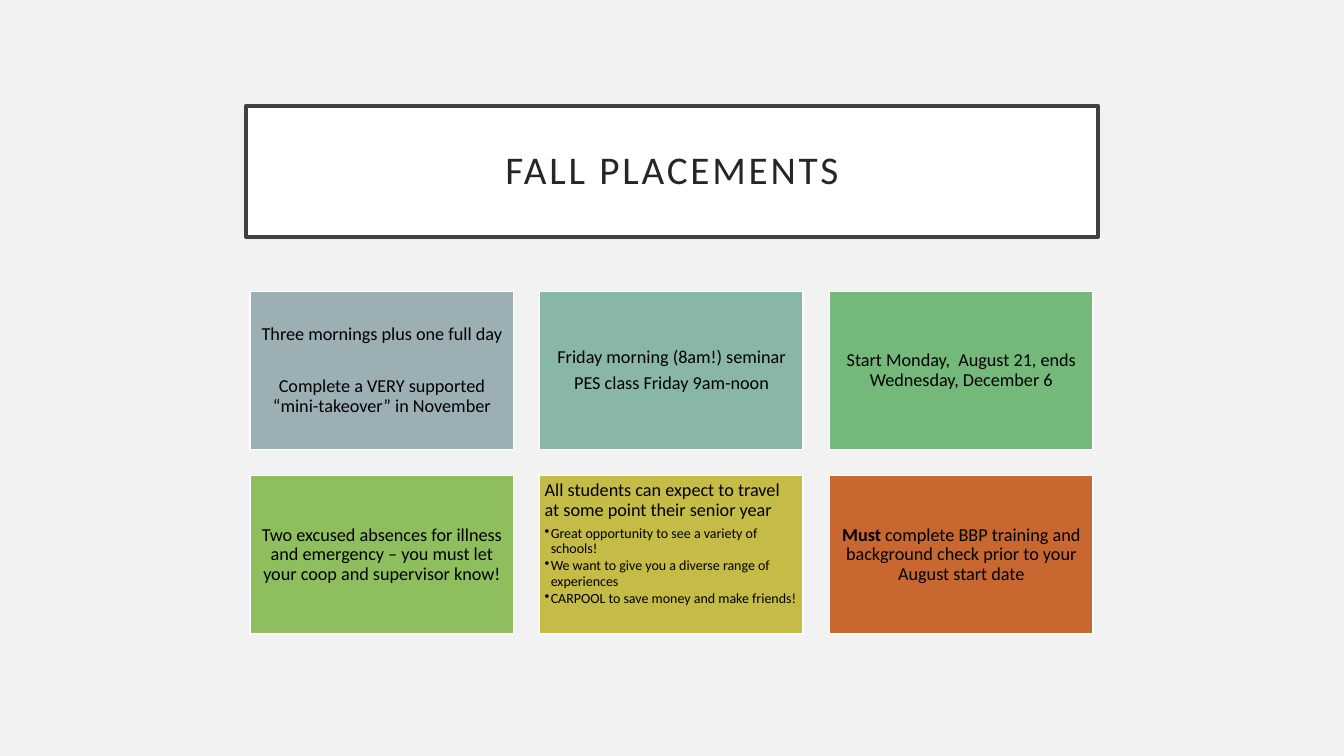
import pptx
import pptx.util
import pptx.dml.color
import pptx.enum.shapes
import pptx.enum.text
import pptx.oxml
import pptx.oxml.ns
import lxml.etree

Inches = pptx.util.Inches
Pt = pptx.util.Pt
Align = pptx.enum.text.PP_ALIGN
Anchor = pptx.enum.text.MSO_ANCHOR

FONT = "Calibri"
COLORS = {
    "background": "F2F2F2",
    "white": "FFFFFF",
    "title_border": "404040",
    "title_text": "262626",
    "card_text": "000000",
    "schedule": "9BAFB5",
    "friday": "88B6A7",
    "dates": "74B97A",
    "absences": "8EBE5E",
    "travel": "C4BC47",
    "training": "C96731",
}
BLANK_LINE_GAP = 23.4
CARDS = [
    ("schedule", [
        ([("Three mornings plus one full day", False)], BLANK_LINE_GAP),
        ([("Complete a VERY supported “mini-takeover” in November", False)], 4.55),
    ], []),
    ("friday", [
        ([("Friday morning (8am!) seminar", False)], 4.55),
        ([("PES class Friday 9am-noon", False)], 4.55),
    ], []),
    ("dates", [
        ([("Start Monday,  August 21, ends Wednesday, December 6", False)], 4.55),
    ], []),
    ("absences", [
        ([("Two excused absences for illness and emergency – you must let "
           "your coop and supervisor know!", False)], 4.55),
    ], []),
    ("travel", [
        ([("All students can expect to travel at some point their senior year", False)], 4.55),
    ], [
        "Great opportunity to see a variety of schools!",
        "We want to give you a diverse range of experiences",
        "CARPOOL to save money and make friends!",
    ]),
    ("training", [
        ([("Must", True),
          (" complete BBP training and background check prior to your August start date", False)],
         4.55),
    ], []),
]


def rgb(name):
    return pptx.dml.color.RGBColor.from_string(COLORS[name])


def style_box(shape, fill, border, border_width, inset, anchor):
    shape.fill.solid()
    shape.fill.fore_color.rgb = rgb(fill)
    shape.line.color.rgb = rgb(border)
    shape.line.width = Pt(border_width)
    frame = shape.text_frame
    frame.word_wrap = True
    frame.auto_size = pptx.enum.text.MSO_AUTO_SIZE.NONE
    frame.vertical_anchor = anchor
    frame.margin_left = frame.margin_right = Inches(inset)
    frame.margin_top = frame.margin_bottom = Inches(inset)
    return frame


def write_paragraph(paragraph, runs, size, color, align, space_after=0):
    paragraph.alignment = align
    paragraph.line_spacing = 0.9
    paragraph.space_before = Pt(0)
    paragraph.space_after = Pt(space_after)
    for text, bold in runs:
        run = paragraph.add_run()
        run.text = text
        run.font.name = FONT
        run.font.size = Pt(size)
        run.font.bold = bold
        run.font.color.rgb = rgb(color)


def add_bullet(paragraph):
    paragraph.level = 1
    properties = paragraph._p.get_or_add_pPr()
    properties.set("marL", str(Inches(0.06)))
    properties.set("indent", str(-Inches(0.06)))
    bullet = lxml.etree.SubElement(properties, pptx.oxml.ns.qn("a:buChar"))
    bullet.set("char", "•")


def build_title(slide, left, top, width, height):
    title = slide.shapes.title
    title.left, title.top = Inches(left), Inches(top)
    title.width, title.height = Inches(width), Inches(height)
    frame = style_box(title, "white", "title_border", 2.5, 0.2, Anchor.MIDDLE)
    heading = frame.paragraphs[0]
    write_paragraph(heading, [("FALL PLACEMENTS", False)], 28, "title_text", Align.CENTER)
    heading.runs[0]._r.get_or_add_rPr().set("spc", "200")


def build_card(slide, left, top, width, height, fill, statements, bullets):
    card = slide.shapes.add_shape(
        pptx.enum.shapes.MSO_SHAPE.RECTANGLE,
        Inches(left), Inches(top), Inches(width), Inches(height))
    card.shadow.inherit = False
    anchor, align = (Anchor.TOP, Align.LEFT) if bullets else (Anchor.MIDDLE, Align.CENTER)
    frame = style_box(card, fill, "white", 1, 0.05, anchor)
    for index, (runs, space_after) in enumerate(statements):
        paragraph = frame.add_paragraph() if index else frame.paragraphs[0]
        write_paragraph(paragraph, runs, 13, "card_text", align, space_after)
    for bullet_text in bullets:
        paragraph = frame.add_paragraph()
        write_paragraph(paragraph, [(bullet_text, False)], 10, "card_text", align, 1.5)
        add_bullet(paragraph)


def build_card_grid(slide, left, top, width, height, columns=3, rows=2, gap=0.26):
    card_width = (width - gap * (columns - 1)) / columns
    card_height = (height - gap * (rows - 1)) / rows
    for index, (fill, statements, bullets) in enumerate(CARDS):
        row, column = divmod(index, columns)
        build_card(slide,
                   left + column * (card_width + gap),
                   top + row * (card_height + gap),
                   card_width, card_height, fill, statements, bullets)


def main():
    presentation = pptx.Presentation()
    presentation.slide_width = Inches(13.33)
    presentation.slide_height = Inches(7.5)
    slide = presentation.slides.add_slide(presentation.slide_layouts[5])
    slide.background.fill.solid()
    slide.background.fill.fore_color.rgb = rgb("background")
    build_title(slide, 2.44, 1.05, 8.45, 1.3)
    build_card_grid(slide, 2.48, 2.89, 8.36, 3.4)
    presentation.save("out.pptx")


if __name__ == "__main__":
    main()
